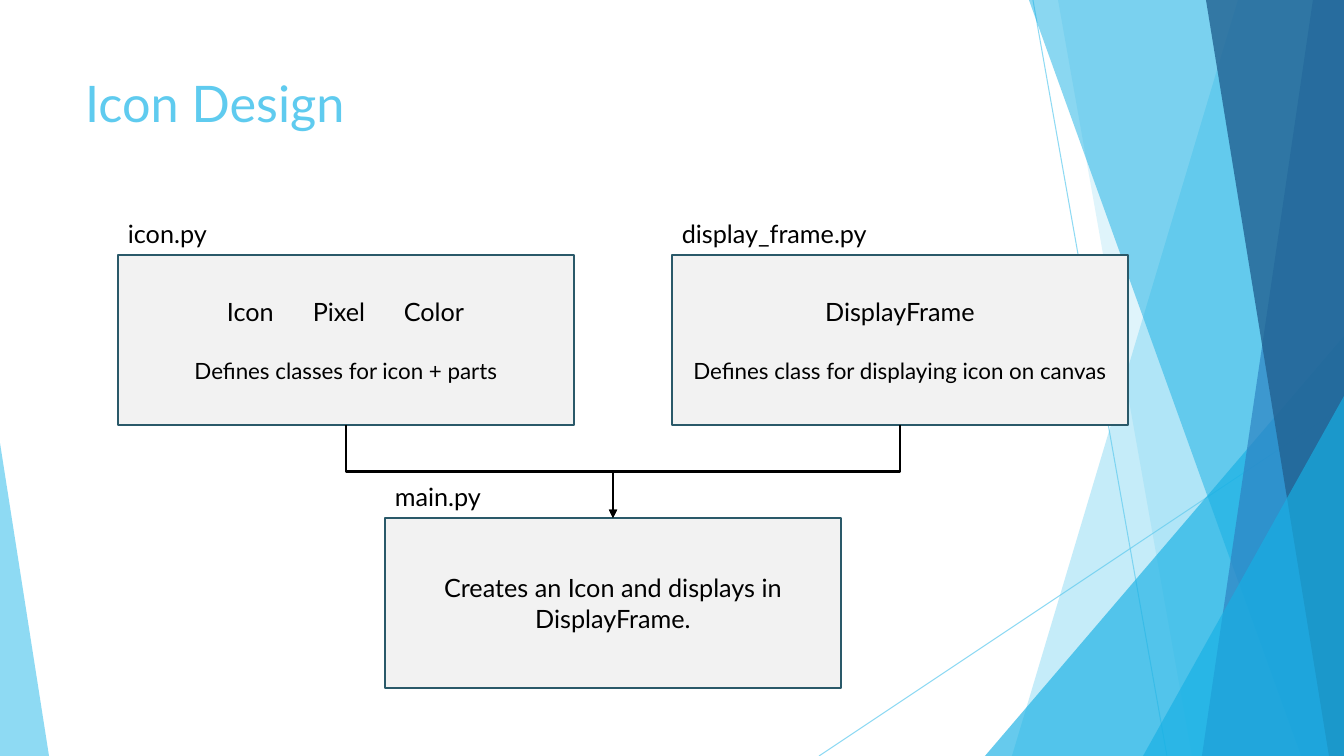
import dataclasses

import lxml.etree
import pptx
import pptx.dml.color
import pptx.enum.shapes
import pptx.enum.text
import pptx.oxml.ns
import pptx.util

WIDTH, HEIGHT = 1344, 756
SCALE = 12192000 / WIDTH


@dataclasses.dataclass(frozen=True)
class Theme:
    font: str = "Lato"
    title_size: int = 36
    text_size: int = 18
    note_size: int = 16
    sky: str = "5FCBEF"
    cyan: str = "17B0E4"
    blue: str = "2E83C3"
    navy: str = "226292"
    box_fill: str = "F2F2F2"
    box_line: str = "2A5969"
    ink: str = "000000"


THEME = Theme()

TITLE = "Icon Design"
TITLE_AREA = (75, 67, 948, 146)

BOX_SIZE = (456, 170)
MODULES = {
    "icon.py": {
        "corner": (118, 255),
        "label_width": 104,
        "names": ["Icon", "Pixel", "Color"],
        "note": "Defines classes for icon + parts",
    },
    "display_frame.py": {
        "corner": (672, 255),
        "label_width": 217,
        "names": ["DisplayFrame"],
        "note": "Defines class for displaying icon on canvas",
    },
    "main.py": {
        "corner": (385, 518),
        "label_width": 112,
        "names": ["Creates an Icon and displays in DisplayFrame."],
        "note": None,
    },
}
NAME_TABS = (99, 185, 276)
LABEL_RISE, LABEL_HEIGHT = 42, 40
IMPORTS = [("icon.py", "main.py"), ("display_frame.py", "main.py")]

RAYS = [((1033, 0), (1167, HEIGHT)), ((WIDTH, 406), (819, HEIGHT))]
FACETS = [
    ("band", (1238, 1012), THEME.sky, 36),
    ("band", (1058, 1192), THEME.sky, 20),
    ("triangle", (985, 336, WIDTH, 1), THEME.cyan, 66),
    ("band", (1029, 1301), THEME.cyan, 50),
    ("band", (1313, 1202), THEME.blue, 70),
    ("band", (1206, 1329), THEME.navy, 80),
    ("triangle", (1143, 396, WIDTH, 1), THEME.cyan, 66),
    ("triangle", (0, 443, 49, 0), THEME.sky, 70),
]


def px(*lengths):
    return [pptx.util.Emu(round(length * SCALE)) for length in lengths]


def color(code):
    return pptx.dml.color.RGBColor.from_string(code)


def add_node(parent, tag, **attributes):
    return lxml.etree.SubElement(parent, pptx.oxml.ns.qn(tag), attributes)


def set_opacity(shape, percent):
    for node in list(shape.element.spPr.iter(pptx.oxml.ns.qn("a:srgbClr"))):
        add_node(node, "a:alpha", val=str(percent * 1000))


def add_span(para, text, size, code=THEME.ink):
    span = para.add_run()
    span.text = text
    span.font.name = THEME.font
    span.font.size = pptx.util.Pt(size)
    span.font.color.rgb = color(code)


def add_line(page, kind, start, end, code, width):
    line = page.shapes.add_connector(kind, *px(*start, *end))
    line.line.color.rgb = color(code)
    line.line.width = pptx.util.Pt(width)
    add_node(line.element.spPr, "a:effectLst")
    return line


def add_facet(page, kind, geometry, code, opacity):
    if kind == "band":
        top_x, bottom_x = geometry
        outline = page.shapes.build_freeform(top_x, 0, SCALE)
        outline.add_line_segments([(WIDTH, 0), (WIDTH, HEIGHT), (bottom_x, HEIGHT)])
        facet = outline.convert_to_shape()
    else:
        left, top, right, apex = geometry
        facet = page.shapes.add_shape(
            pptx.enum.shapes.MSO_SHAPE.ISOSCELES_TRIANGLE,
            *px(left, top, right - left, HEIGHT - top),
        )
        facet.adjustments[0] = apex
    facet.shadow.inherit = False
    facet.fill.solid()
    facet.fill.fore_color.rgb = color(code)
    facet.line.fill.background()
    set_opacity(facet, opacity)


def add_title(page):
    title = page.shapes.title
    title.left, title.top, title.width, title.height = px(*TITLE_AREA)
    title.text_frame.vertical_anchor = pptx.enum.text.MSO_ANCHOR.TOP
    para = title.text_frame.paragraphs[0]
    para.alignment = pptx.enum.text.PP_ALIGN.LEFT
    add_span(para, TITLE, THEME.title_size, THEME.sky)


def add_names(para, names):
    if len(names) == 1:
        para.alignment = pptx.enum.text.PP_ALIGN.CENTER
        add_span(para, names[0], THEME.text_size)
        return
    para.alignment = pptx.enum.text.PP_ALIGN.LEFT
    stops = add_node(para._p.get_or_add_pPr(), "a:tabLst")
    for position, name in zip(px(*NAME_TABS), names):
        add_node(stops, "a:tab", pos=str(position), algn="l")
        add_span(para, "\t" + name, THEME.text_size)


def add_module(page, label, module):
    box = page.shapes.add_shape(
        pptx.enum.shapes.MSO_SHAPE.RECTANGLE, *px(*module["corner"], *BOX_SIZE)
    )
    box.shadow.inherit = False
    box.fill.solid()
    box.fill.fore_color.rgb = color(THEME.box_fill)
    box.line.color.rgb = color(THEME.box_line)
    box.line.width = pptx.util.Pt(1.5)
    frame = box.text_frame
    frame.word_wrap = True
    frame.vertical_anchor = pptx.enum.text.MSO_ANCHOR.MIDDLE
    para = frame.paragraphs[0]
    if module["note"]:
        para.space_after = pptx.util.Pt(22)
        note = frame.add_paragraph()
        note.alignment = pptx.enum.text.PP_ALIGN.CENTER
        add_span(note, module["note"], THEME.note_size)
    add_names(para, module["names"])

    left, top = module["corner"]
    caption = page.shapes.add_textbox(
        *px(left, top - LABEL_RISE, module["label_width"], LABEL_HEIGHT)
    )
    caption.text_frame.word_wrap = False
    add_span(caption.text_frame.paragraphs[0], label, THEME.text_size)


def add_import_arrow(page, source, target):
    (source_x, source_y), (target_x, target_y) = source["corner"], target["corner"]
    drop = target_y - source_y - BOX_SIZE[1]
    span = abs(target_x - source_x)
    middle_x = (source_x + target_x + BOX_SIZE[0]) / 2
    middle_y = target_y - drop / 2
    side = 1 if target_x > source_x else -1
    arrow = add_line(
        page,
        pptx.enum.shapes.MSO_CONNECTOR.ELBOW,
        (middle_x + side * drop / 2, middle_y - span / 2),
        (middle_x - side * drop / 2, middle_y + span / 2),
        THEME.ink,
        2,
    )
    turn = 270 if side == 1 else 90
    arrow.element.spPr.find(pptx.oxml.ns.qn("a:xfrm")).set("rot", str(turn * 60000))
    add_node(arrow.line._get_or_add_ln(), "a:tailEnd", type="triangle")


def main():
    deck = pptx.Presentation()
    deck.slide_width, deck.slide_height = px(WIDTH, HEIGHT)
    page = deck.slides.add_slide(deck.slide_layouts.get_by_name("Title Only"))
    for start, end in RAYS:
        ray = add_line(
            page, pptx.enum.shapes.MSO_CONNECTOR.STRAIGHT, start, end, THEME.sky, 0.75
        )
        set_opacity(ray, 70)
    for facet in FACETS:
        add_facet(page, *facet)
    add_title(page)
    for label, module in MODULES.items():
        add_module(page, label, module)
    for source, target in IMPORTS:
        add_import_arrow(page, MODULES[source], MODULES[target])
    deck.save("out.pptx")


if __name__ == "__main__":
    main()
